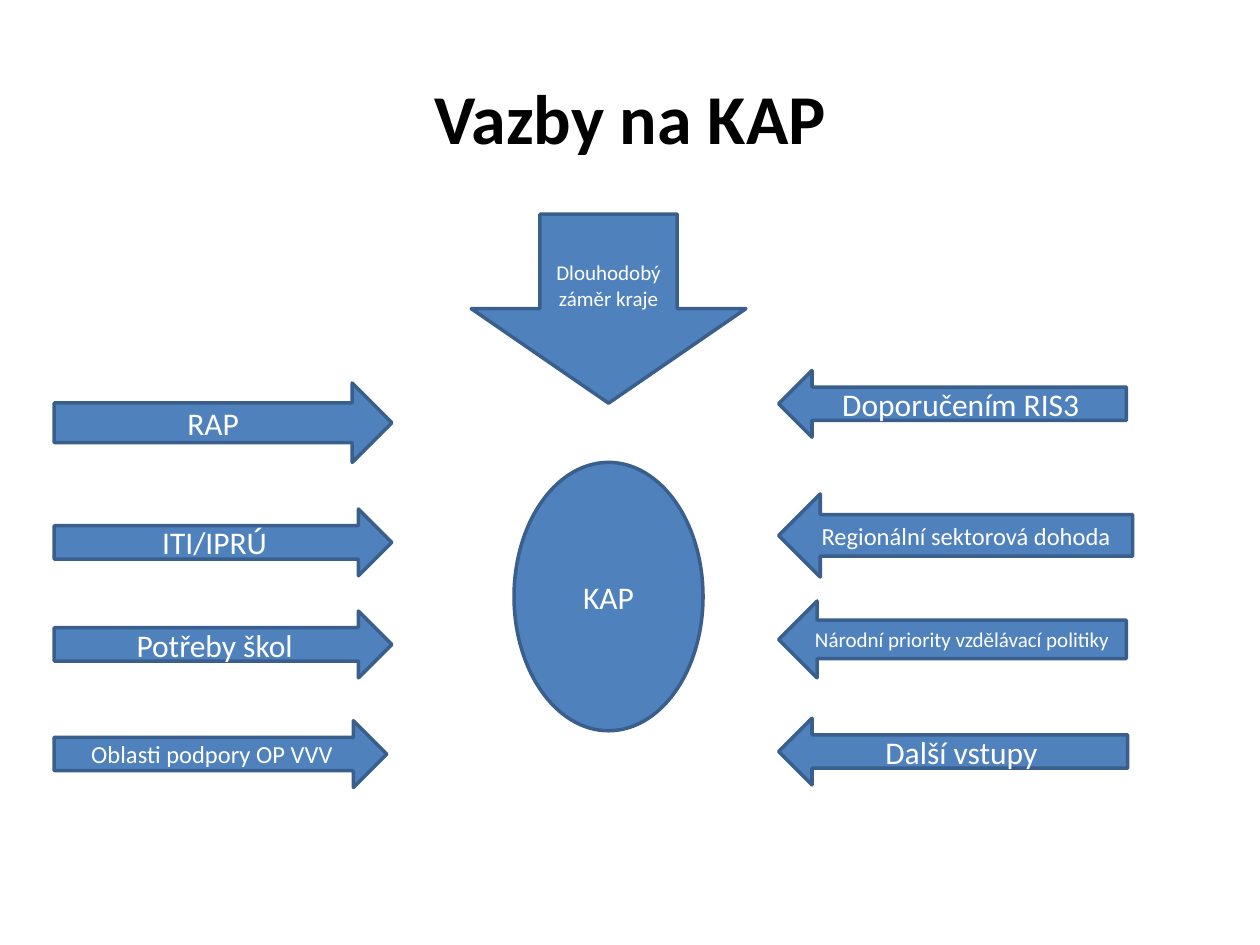
from pptx import Presentation, util as u
from pptx.dml.color import RGBColor
from pptx.enum import shapes, text

# Content: wording, top, width, height, text size
TITLE = "Vazby na KAP"
LEFT = [
    ("RAP", 3.04, 2.68, 0.63, 18),
    ("ITI/IPRÚ", 4.04, 2.68, 0.53, 18),
    ("Potřeby škol", 4.85, 2.68, 0.53, 18),
    ("Oblasti podpory OP VVV", 5.72, 2.64, 0.53, 14),
]
RIGHT = [
    ("Doporučením RIS3", 2.94, 2.76, 0.53, 18),
    ("Regionální sektorová dohoda", 3.92, 2.81, 0.66, 14),
    ("Národní priority vzdělávací politiky", 4.77, 2.76, 0.61, 12),
    ("Další vstupy", 5.7, 2.77, 0.53, 18),
]
MIDDLE = [
    ("KAP", 3.67, 1.5, 2.13, 18),
    ("Dlouhodobý záměr kraje", 1.7, 2.18, 1.5, 12),
]
LEFT_X, RIGHT_X, AXIS = 0.43, 6.18, 4.83
KIND = shapes.MSO_SHAPE

prs = Presentation()
prs.slide_width, prs.slide_height = u.Inches(10), u.Inches(7.5)
slide = prs.slides.add_slide(prs.slide_layouts[6])


def color(code):
    return RGBColor.from_string(code)


def write(shape, words, size=18, ink="FFFFFF", bold=False):
    frame = shape.text_frame
    frame.word_wrap = True
    frame.vertical_anchor = text.MSO_ANCHOR.MIDDLE
    para = frame.paragraphs[0]
    para.alignment = text.PP_ALIGN.CENTER
    run = para.add_run()
    run.text = words
    font = run.font
    font.name, font.size, font.bold = "Calibri", u.Pt(size), bold
    font.color.rgb = color(ink)


def block(kind, x, item):
    words, top, wide, high, size = item
    shape = slide.shapes.add_shape(kind, *map(u.Inches, (x, top, wide, high)))
    shape.shadow.inherit = False
    shape.fill.solid()
    shape.fill.fore_color.rgb = color("4F81BD")
    shape.line.color.rgb = color("3A5F8C")
    shape.line.width = u.Pt(2)
    write(shape, words, size)


# Title
title = slide.shapes.add_textbox(*map(u.Inches, (0.5, 0.3, 9, 1.25)))
write(title, TITLE, size=40, ink="000000", bold=True)

# Centre column, both parts on one axis
for kind, item in zip((KIND.OVAL, KIND.DOWN_ARROW), MIDDLE):
    block(kind, AXIS - item[2] / 2, item)

# Inputs from both sides
for kind, x, items in ((KIND.RIGHT_ARROW, LEFT_X, LEFT),
                       (KIND.LEFT_ARROW, RIGHT_X, RIGHT)):
    for item in items:
        block(kind, x, item)

prs.save("out.pptx")
